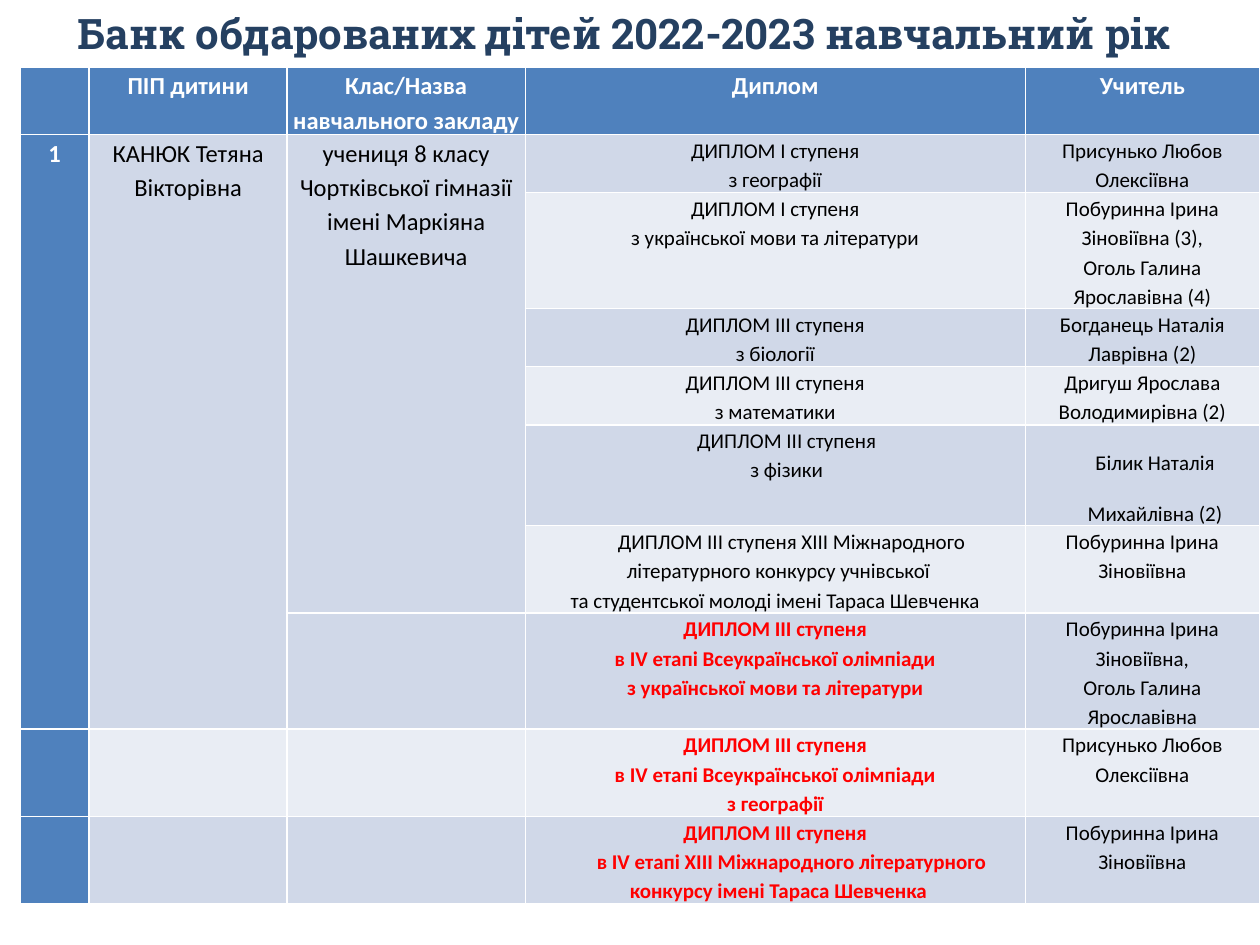
from dataclasses import dataclass

from pptx import Presentation
from pptx.dml.color import RGBColor
from pptx.enum.text import MSO_ANCHOR, PP_ALIGN
from pptx.util import Cm, Pt

CENTER = PP_ALIGN.CENTER
TOP = MSO_ANCHOR.TOP


@dataclass(frozen=True)
class Theme:
    title_font: str = "Roboto Slab"
    table_font: str = "Calibri"
    title_size: int = 24
    lead_size: int = 14
    body_size: int = 12
    title: str = "254061"
    header: str = "4F81BD"
    band_dark: str = "D0D8E8"
    band_light: str = "E9EDF4"
    on_header: str = "FFFFFF"
    body: str = "000000"
    highlight: str = "FF0000"


@dataclass(frozen=True)
class Line:
    text: str
    margin: float = 0
    first_line: float = 0
    spacing: float = 1.15


@dataclass(frozen=True)
class Award:
    height: float
    diploma: tuple[Line, ...]
    teachers: tuple[Line, ...]
    highlighted: bool = False


THEME = Theme()
COLUMN_WIDTHS = (1.4, 3.99, 4.8, 10.08, 4.72)
HEADER_HEIGHT = 1.35
HEADINGS = ("", "ПІП дитини", "Клас/Назва навчального закладу", "Диплом", "Учитель")

FIRST = Line("ДИПЛОМ І ступеня")
THIRD = Line("ДИПЛОМ ІІІ ступеня")
OLYMPIAD = Line("в ІV етапі Всеукраїнської олімпіади")
LITERATURE = Line("з української мови та літератури")
GEOGRAPHY = Line("з географії")
PRYSUNKO = Line("Присунько Любов Олексіївна")
POBURYNNA = Line("Побуринна Ірина Зіновіївна")

AWARDS = (
    Award(1.17, (FIRST, GEOGRAPHY), (PRYSUNKO,)),
    Award(2.34, (FIRST, LITERATURE),
          (Line("Побуринна Ірина Зіновіївна (3),"), Line("Оголь Галина Ярославівна (4)"))),
    Award(1.17, (THIRD, Line("з біології")), (Line("Богданець Наталія Лаврівна (2)"),)),
    Award(1.17, (THIRD, Line("з математики")), (Line("Дригуш Ярослава Володимирівна (2)"),)),
    Award(2.03, (Line("ДИПЛОМ ІІІ ступеня", margin=0.46), Line("з фізики", margin=0.46)),
          (Line("Білик Наталія Михайлівна (2)", margin=0.51, spacing=2.0),)),
    Award(1.76,
          (Line("ДИПЛОМ ІІІ ступеня ХІІІ Міжнародного літературного конкурсу учнівської",
                margin=0.13, first_line=0.53),
           Line("та студентської молоді імені Тараса Шевченка")),
          (POBURYNNA,)),
    Award(2.34, (THIRD, OLYMPIAD, LITERATURE),
          (Line("Побуринна Ірина Зіновіївна,"), Line("Оголь Галина Ярославівна")), True),
    Award(1.76, (THIRD, OLYMPIAD, GEOGRAPHY), (PRYSUNKO,), True),
    Award(1.76,
          (THIRD,
           Line("в ІV етапі ХІІІ Міжнародного літературного конкурсу імені Тараса Шевченка",
                margin=0.13, first_line=0.53)),
          (POBURYNNA,), True),
)


def style_runs(paragraph, font: str, size: int, color: str, bold: bool) -> None:
    for run in paragraph.runs:
        run.font.name = font
        run.font.size = Pt(size)
        run.font.bold = bold
        run.font.color.rgb = RGBColor.from_string(color)


def write_cell(cell, lines: tuple[Line, ...], size: int, color: str, bold: bool = False) -> None:
    cell.margin_left = cell.margin_right = Cm(0.03)
    cell.margin_top = cell.margin_bottom = 0
    cell.vertical_anchor = TOP
    cell.text_frame.text = "\n".join(line.text for line in lines)
    for paragraph, line in zip(cell.text_frame.paragraphs, lines):
        paragraph.alignment = CENTER
        paragraph.line_spacing = line.spacing
        if line.margin:
            properties = paragraph._p.get_or_add_pPr()
            properties.set("marL", str(Cm(line.margin)))
            properties.set("indent", str(Cm(line.first_line)))
        style_runs(paragraph, THEME.table_font, size, color, bold)


def fill_cell(cell, color: str) -> None:
    cell.fill.solid()
    cell.fill.fore_color.rgb = RGBColor.from_string(color)


def add_title(slide, text: str) -> None:
    title = slide.shapes.add_textbox(Cm(0.2), Cm(0.03), Cm(24.8), Cm(1.28))
    title.text_frame.word_wrap = True
    title.text_frame.text = text
    heading = title.text_frame.paragraphs[0]
    heading.alignment = CENTER
    style_runs(heading, THEME.title_font, THEME.title_size, THEME.title, True)


def add_award_table(slide) -> None:
    heights = (HEADER_HEIGHT, *(award.height for award in AWARDS))
    table = slide.shapes.add_table(
        len(heights), len(COLUMN_WIDTHS), Cm(0.4), Cm(1.35),
        Cm(sum(COLUMN_WIDTHS)), Cm(sum(heights))).table
    table.first_col = True
    for column, width in zip(table.columns, COLUMN_WIDTHS):
        column.width = Cm(width)
    for row, height in zip(table.rows, heights):
        row.height = Cm(height)

    # Header and banded fills
    for row_index in range(len(heights)):
        band = THEME.band_dark if row_index % 2 else THEME.band_light
        for column_index in range(len(COLUMN_WIDTHS)):
            in_header = row_index == 0 or column_index == 0
            fill_cell(table.cell(row_index, column_index), THEME.header if in_header else band)

    # Header text
    for column_index, heading in enumerate(HEADINGS):
        write_cell(table.cell(0, column_index), (Line(heading),),
                   THEME.lead_size, THEME.on_header, True)

    # Pupil, spanning her awards
    for column_index, last_row in enumerate((7, 7, 6)):
        table.cell(1, column_index).merge(table.cell(last_row, column_index))
    write_cell(table.cell(1, 0), (Line("1"),), THEME.lead_size, THEME.on_header, True)
    write_cell(table.cell(1, 1), (Line("КАНЮК Тетяна Вікторівна"),), THEME.lead_size, THEME.body)
    school = Line("учениця 8 класу Чортківської гімназії імені Маркіяна Шашкевича")
    write_cell(table.cell(1, 2), (school,), THEME.lead_size, THEME.body)

    # Diplomas and teachers
    for row_index, award in enumerate(AWARDS, start=1):
        diploma_color = THEME.highlight if award.highlighted else THEME.body
        write_cell(table.cell(row_index, 3), award.diploma,
                   THEME.body_size, diploma_color, award.highlighted)
        write_cell(table.cell(row_index, 4), award.teachers, THEME.body_size, THEME.body)


def main() -> None:
    presentation = Presentation()
    presentation.slide_width = Cm(25.4)
    presentation.slide_height = Cm(19.05)
    slide = presentation.slides.add_slide(presentation.slide_layouts[6])
    add_title(slide, "Банк обдарованих дітей 2022-2023 навчальний рік")
    add_award_table(slide)
    presentation.save("out.pptx")


if __name__ == "__main__":
    main()
